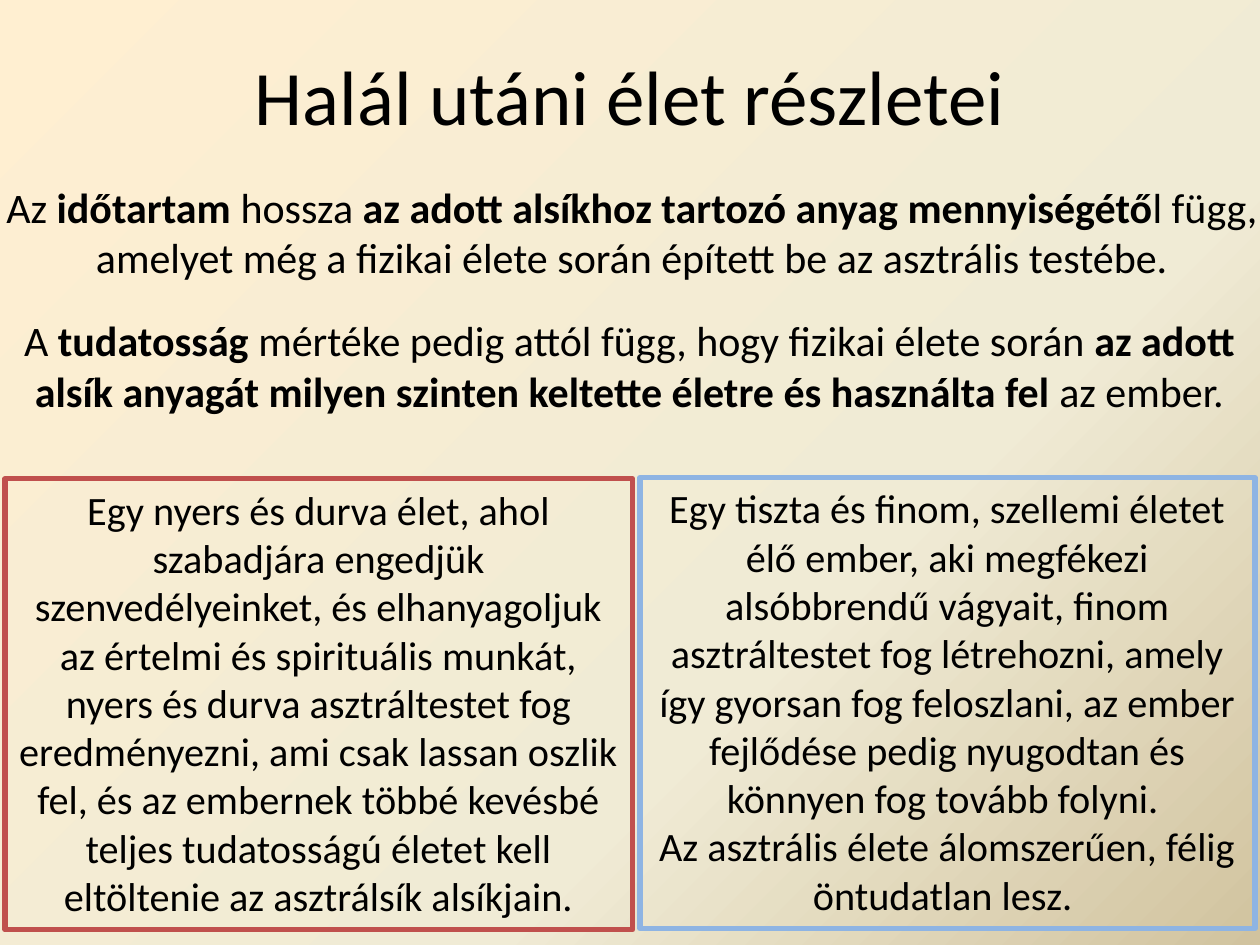
import copy

import pptx
import pptx.dml.color
import pptx.enum.text
import pptx.oxml.ns
import pptx.util

Pt = pptx.util.Pt
RGBColor = pptx.dml.color.RGBColor

BLACK = RGBColor(0x00, 0x00, 0x00)
RED = RGBColor(0xC0, 0x50, 0x4D)
BLUE = RGBColor(0x8E, 0xB4, 0xE3)
BACKGROUND = [
    (0, RGBColor(0xFF, 0xEF, 0xD1)),
    (0.65, RGBColor(0xF0, 0xEB, 0xD5)),
    (1, RGBColor(0xD1, 0xC3, 0x9F)),
]
FONT = "Calibri"

TITLE = "Halál utáni élet részletei"
TITLE_PLACE = (36, 9.36, 648, 90)

# Each statement: place, then spans of (text, bold)
STATEMENTS = [
    ((-14.4, 100.08, 750.96, 65.52), [
        ("Az ", False),
        ("időtartam", True),
        (" hossza ", False),
        ("az adott alsíkhoz tartozó anyag mennyiségétő", True),
        ("l függ, amelyet még a fizikai élete során épített be az asztrális testébe.", False),
    ]),
    ((-14.4, 176.4, 748.08, 65.52), [
        ("A ", False),
        ("tudatosság", True),
        (" mértéke pedig attól függ, hogy fizikai élete során ", False),
        ("az adott alsík anyagát milyen szinten keltette életre és használta fel", True),
        (" az ember.", False),
    ]),
]

# Each way of life: place, frame colour, lines
LIVES = [
    ((2.88, 273.6, 358.56, 257.76), RED, [
        "Egy nyers és durva élet, ahol szabadjára engedjük szenvedélyeinket, "
        "és elhanyagoljuk az értelmi és spirituális munkát, nyers és durva "
        "asztráltestet fog eredményezni, ami csak lassan oszlik fel, és az "
        "embernek többé kevésbé teljes tudatosságú életet kell eltöltenie az "
        "asztrálsík alsíkjain.",
    ]),
    ((365.76, 272.88, 351.36, 257.76), BLUE, [
        "Egy tiszta és finom, szellemi életet élő ember, aki megfékezi "
        "alsóbbrendű vágyait, finom asztráltestet fog létrehozni, amely így "
        "gyorsan fog feloszlani, az ember fejlődése pedig nyugodtan és "
        "könnyen fog tovább folyni. ",
        "Az asztrális élete álomszerűen, félig öntudatlan lesz. ",
    ]),
]


def write(box, lines, size, anchor=pptx.enum.text.MSO_ANCHOR.TOP):
    """Fill box with one centred paragraph; each line is a list of (text, bold)."""
    frame = box.text_frame
    frame.word_wrap = True
    frame.vertical_anchor = anchor
    para = frame.paragraphs[0]
    para.alignment = pptx.enum.text.PP_ALIGN.CENTER
    for number, line in enumerate(lines):
        if number:
            para.add_line_break()
        for text, bold in line:
            span = para.add_run()
            span.text = text
            span.font.name = FONT
            span.font.size = Pt(size)
            span.font.bold = bold
            span.font.color.rgb = BLACK


def add_box(page, place):
    return page.shapes.add_textbox(*map(Pt, place))


def paint_background(page):
    fill = page.background.fill
    fill.gradient()
    fill.gradient_angle = 315  # counter-clockwise: runs to the lower right
    stop_list = page.element.find(".//" + pptx.oxml.ns.qn("a:gsLst"))
    while len(stop_list) < len(BACKGROUND):
        stop_list.append(copy.deepcopy(stop_list[0]))
    for stop, (position, color) in zip(fill.gradient_stops, BACKGROUND):
        stop.position = position
        stop.color.rgb = color


def main():
    deck = pptx.Presentation()
    deck.slide_width, deck.slide_height = Pt(720), Pt(540)
    page = deck.slides.add_slide(deck.slide_layouts.get_by_name("Title Only"))
    paint_background(page)

    title = page.shapes.title
    title.left, title.top, title.width, title.height = map(Pt, TITLE_PLACE)
    write(title, [[(TITLE, False)]], size=44, anchor=pptx.enum.text.MSO_ANCHOR.MIDDLE)

    for place, spans in STATEMENTS:
        write(add_box(page, place), [spans], size=24)

    for place, color, lines in LIVES:
        box = add_box(page, place)
        box.line.color.rgb = color
        box.line.width = Pt(3)
        write(box, [[(line, False)] for line in lines], size=23)

    deck.save("out.pptx")


if __name__ == "__main__":
    main()
